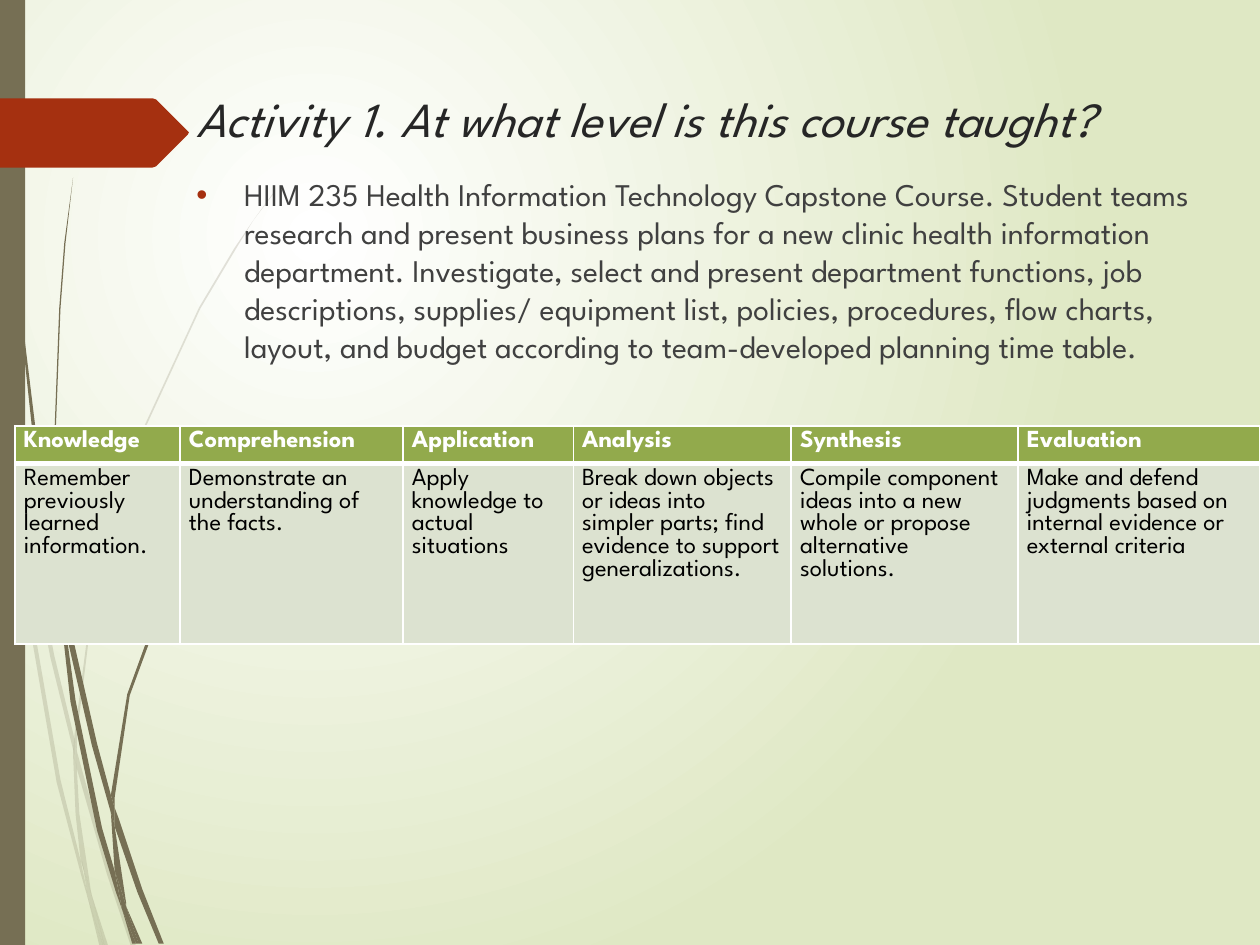
from lxml import etree
from pptx import Presentation
from pptx.dml.color import RGBColor
from pptx.enum.shapes import MSO_SHAPE
from pptx.oxml import parse_xml
from pptx.oxml.ns import qn
from pptx.util import Emu, Inches, Pt

RECT = MSO_SHAPE.RECTANGLE
NS = 'xmlns:a="http://schemas.openxmlformats.org/drawingml/2006/main"'
FONT = "League Spartan"
BROWN, RED, WHITE = "766F54", "A53010", "FFFFFF"
BG_INNER, BG_OUTER = WHITE, "DFE8C4"

TITLE = "Activity 1. At what level is this course taught?"
BODY = ("HIIM 235 Health Information Technology Capstone Course. Student teams "
        "research and present business plans for a new clinic health information "
        "department. Investigate, select and present department functions, job "
        "descriptions, supplies/ equipment list, policies, procedures, flow charts, "
        "layout, and budget according to team-developed planning time table.")

# Level, description, column width in inches
LEVELS = [
    ("Knowledge", "Remember previously learned information.", 1.31),
    ("Comprehension", "Demonstrate an understanding of the facts.", 1.77),
    ("Application", "Apply knowledge to actual situations", 1.35),
    ("Analysis", "Break down objects or ideas into simpler parts; "
                 "find evidence to support generalizations.", 1.73),
    ("Synthesis", "Compile component ideas into a new whole or propose "
                  "alternative solutions.", 1.8),
    ("Evaluation", "Make and defend judgments based on internal evidence "
                   "or external criteria", 1.92),
]
# Fill, bold, text colour, bottom border in points, row height in inches
ROW_STYLES = [("92AA4C", True, WHITE, 3, 0.3), ("DCE2D0", False, "000000", 1, 1.43)]

# Grass outlines, in hundredths of an inch
PALE_GRASS = [
    [(8, 350), (6, 322), (0, 282), (0, 299), (7, 344)],
    [(40, 522), (59, 599), (59, 586), (43, 520), (10, 345), (12, 376)],
    [(64, 607), (61, 596), (61, 610), (85, 694), (104, 751), (108, 751), (88, 692)],
    [(83, 751), (86, 751), (73, 711)],
    [(64, 683), (48, 619), (22, 469), (12, 376), (8, 350), (19, 470), (45, 621),
     (64, 693), (70, 714), (69, 707)],
    [(58, 599), (60, 646), (64, 683), (67, 692), (73, 711), (72, 706), (63, 646),
     (61, 610), (61, 608)],
    [(61, 584), (76, 462), (111, 349), (159, 245), (187, 198), (201, 175), (217, 154),
     (217, 153), (201, 175), (186, 197), (158, 244), (110, 348), (75, 461), (59, 584),
     (59, 586), (61, 596)],
    [(70, 714), (79, 751), (82, 751)],
    [(61, 608), (61, 610), (61, 596), (59, 586), (58, 599)],
    [(67, 692), (65, 683), (69, 707), (70, 714), (82, 751), (83, 751), (73, 711)],
]
DARK_GRASS = [
    [(5, 110), (14, 233), (27, 355), (46, 477), (47, 481), (45, 457), (45, 453),
     (30, 355), (15, 232), (6, 109), (4, 48), (3, 0), (2, 0), (3, 48)],
    [(73, 592), (88, 645), (88, 633), (88, 631), (77, 590), (50, 472), (53, 505)],
    [(94, 649), (91, 641), (91, 656), (109, 708), (126, 749), (130, 749), (113, 706)],
    [(91, 691), (81, 657), (60, 556), (53, 505), (47, 477), (56, 557), (77, 659),
     (92, 708), (97, 722), (96, 717)],
    [(50, 472), (48, 453), (44, 349), (48, 245), (52, 193), (58, 141), (51, 193),
     (47, 245), (43, 349), (45, 449), (49, 472)],
    [(110, 749), (113, 749), (100, 719)],
    [(47, 477), (53, 505), (50, 472), (49, 472), (45, 449), (45, 453)],
    [(91, 633), (103, 552), (131, 476), (169, 406), (191, 374), (203, 359), (216, 344),
     (215, 344), (203, 358), (191, 373), (168, 405), (129, 474), (101, 551), (88, 631),
     (91, 641)],
    [(97, 722), (105, 749), (108, 749)],
    [(88, 645), (91, 691), (96, 706), (100, 719), (100, 716), (91, 656), (90, 651)],
    [(88, 645), (90, 651), (91, 656), (91, 641), (88, 631), (88, 633)],
    [(96, 706), (91, 691), (96, 717), (97, 722), (108, 749), (110, 749), (100, 719)],
]
ARROW = [(149, 107), (124, 132), (121, 133), (0, 133), (0, 78), (121, 78), (124, 79),
         (149, 104), (150, 105)]


def rgb(color):
    return RGBColor.from_string(color)


def paint(sp, color, alpha=None):
    sp.shadow.inherit = False
    sp.fill.solid()
    sp.fill.fore_color.rgb = rgb(color)
    sp.line.fill.background()
    if alpha:
        clr = sp.fill._xPr.find(".//" + qn("a:srgbClr"))
        etree.SubElement(clr, qn("a:alpha")).set("val", str(alpha * 1000))


def outline(points, color, alpha=None):
    builder = s.shapes.build_freeform(*points[0], scale=Inches(0.01))
    builder.add_line_segments(points[1:], close=True)
    paint(builder.convert_to_shape(), color, alpha)


def write(tf, text, size, color, leading, bold=False, italic=False):
    tf.word_wrap = True
    tf.text = text
    p = tf.paragraphs[0]
    p.line_spacing = Pt(leading)
    font = p.runs[0].font
    font.name, font.size, font.bold, font.italic = FONT, Pt(size), bold, italic
    font.color.rgb = rgb(color)
    return p


def text_box(left, top, width, height, *args, **style):
    sp = s.shapes.add_textbox(*map(Inches, (left, top, width, height)))
    return write(sp.text_frame, *args, **style)


def border(cell, bottom):
    tc_pr = cell._tc.get_or_add_tcPr()
    widths = {"lnL": 1, "lnR": 1, "lnT": 1, "lnB": bottom}
    for i, (tag, width) in enumerate(widths.items()):
        tc_pr.insert(i, parse_xml(
            f'<a:{tag} {NS} w="{Pt(width)}"><a:solidFill>'
            f'<a:srgbClr val="{WHITE}"/></a:solidFill></a:{tag}>'))


prs = Presentation()
prs.slide_width, prs.slide_height = Inches(10), Inches(7.5)
s = prs.slides.add_slide(prs.slide_layouts[6])

# Radial background
fill = s.background.fill
fill.gradient()
for stop, color, position in zip(fill.gradient_stops, (BG_INNER, BG_OUTER), (0, 1)):
    stop.color.rgb = rgb(color)
    stop.position = position
lin = s._element.find(".//" + qn("a:lin"))
lin.getparent().replace(lin, parse_xml(
    f'<a:path {NS} path="circle"><a:fillToRect l="50000" t="50000" '
    'r="100000" b="100000"/></a:path>'))

# Grass, side band and arrow
for blade in PALE_GRASS:
    outline(blade, BROWN, 20)
for blade in DARK_GRASS:
    outline(blade, BROWN)
paint(s.shapes.add_shape(RECT, 0, 0, Inches(0.2), prs.slide_height), BROWN)
outline(ARROW, RED)

# Course description
p = text_box(1.46, 1.34, 8.46, 1.82, BODY, 18, "404040", 21.7)
p_pr = p._p.get_or_add_pPr()
p_pr.set("marL", str(Inches(0.38)))
p_pr.set("indent", str(-Inches(0.38)))
for xml in (f'<a:buClr {NS}><a:srgbClr val="{RED}"/></a:buClr>',
            f'<a:buFont {NS} typeface="Arial"/>',
            f'<a:buChar {NS} char="•"/>'):
    p_pr.append(parse_xml(xml))

# Table of levels
width = sum(level[2] for level in LEVELS)
height = sum(style[4] for style in ROW_STYLES)
table = s.shapes.add_table(len(ROW_STYLES), len(LEVELS), Inches(0.12), Inches(3.38),
                           Inches(width), Inches(height)).table
for c, level in enumerate(LEVELS):
    table.columns[c].width = Inches(level[2])
    for r, (color, bold, ink, bottom, row_height) in enumerate(ROW_STYLES):
        table.rows[r].height = Inches(row_height)
        cell = table.cell(r, c)
        cell.margin_left = cell.margin_right = Inches(0.07)
        cell.margin_top = cell.margin_bottom = Inches(0.04)
        cell.fill.solid()
        cell.fill.fore_color.rgb = rgb(color)
        border(cell, bottom)
        write(cell.text_frame, level[r], 14, ink, 12.9, bold=bold)

# Title
text_box(1.46, 0.63, 8.68, 1.05, TITLE, 28, "262626", 35, italic=True)

prs.save("out.pptx")
